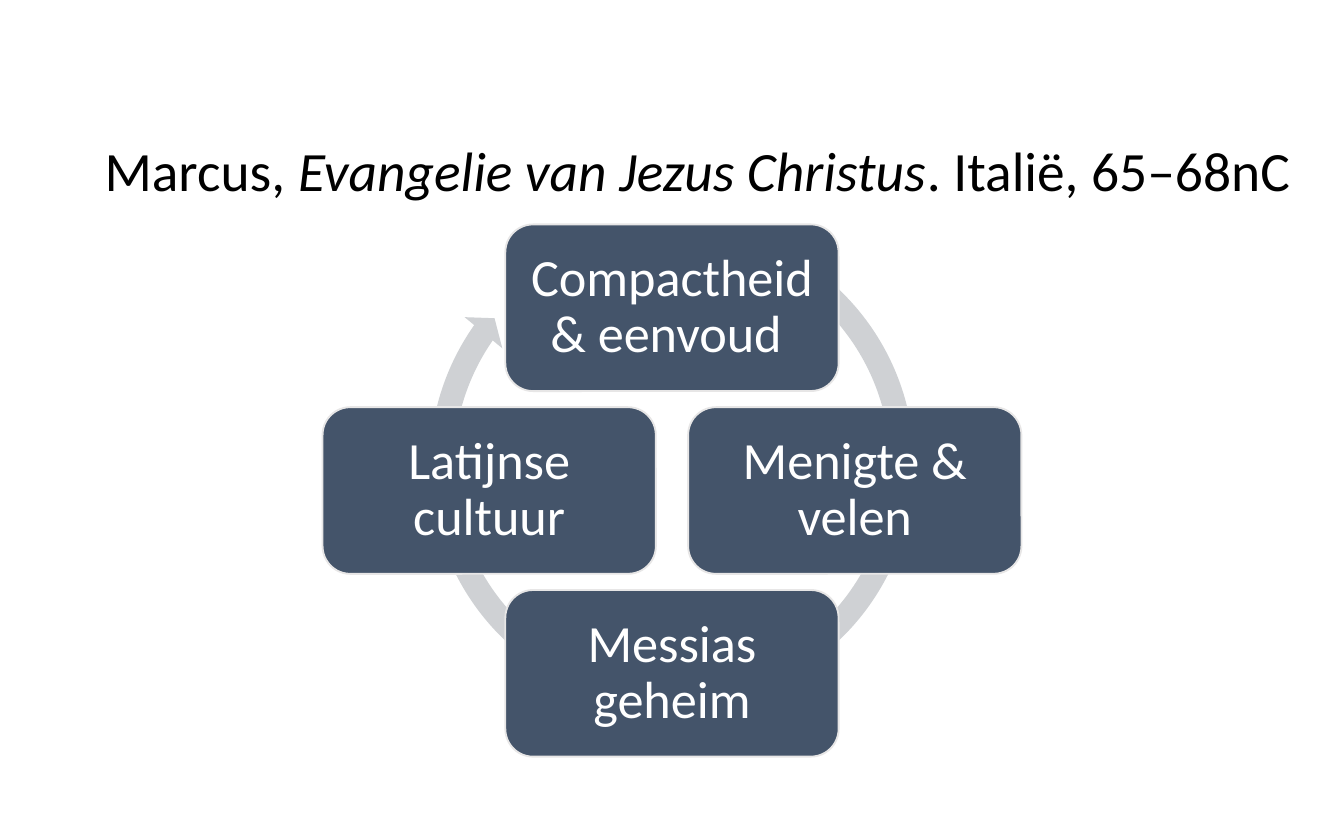
from dataclasses import dataclass

from pptx import Presentation
from pptx.dml.color import RGBColor
from pptx.enum.shapes import MSO_SHAPE
from pptx.enum.text import MSO_ANCHOR, PP_ALIGN
from pptx.util import Inches, Pt


@dataclass(frozen=True)
class Theme:
    font: str = "Calibri"
    ink: str = "000000"
    paper: str = "FFFFFF"
    card: str = "44546A"
    edge: str = "E7E6E6"
    arrow: str = "CFD1D4"
    title_size: float = 29.7
    card_size: float = 28
    line_spacing: float = 0.9


class CyclePage:
    """Draws a titled cycle on a grid centred on the ring."""

    center_x, center_y, step = 5, 3.65, 1.36
    card_width, card_height = 2.48, 1.24

    def __init__(self, page, theme):
        self.page, self.theme = page, theme

    def place(self, column, row, width, height):
        left = self.center_x + column * self.step - width / 2
        top = self.center_y + row * self.step - height / 2
        return [Inches(length) for length in (left, top, width, height)]

    def add_text(self, box, spans, size, color, margins):
        frame = box.text_frame
        frame_format = {"word_wrap": True, "vertical_anchor": MSO_ANCHOR.MIDDLE}
        frame_format.update({f"margin_{side}": Inches(inset) for side, inset in margins.items()})
        for name, value in frame_format.items():
            setattr(frame, name, value)
        para = frame.paragraphs[0]
        para.alignment, para.line_spacing = PP_ALIGN.CENTER, self.theme.line_spacing
        for text, italic in spans:
            span = para.add_run()
            span.text = text
            span.font.color.rgb = RGBColor.from_string(color)
            for name, value in {"name": self.theme.font, "size": Pt(size), "italic": italic}.items():
                setattr(span.font, name, value)

    def title(self, spans):
        area = [Inches(length) for length in (0.5, 0.92, 9.38, 0.74)]
        box = self.page.shapes.add_textbox(*area)
        margins = {"left": 0.1, "right": 0.1, "top": 0.05, "bottom": 0.05}
        self.add_text(box, spans, self.theme.title_size, self.theme.ink, margins)

    def shape(self, preset, area, fill):
        shape = self.page.shapes.add_shape(preset, *area)
        shape.shadow.inherit = False
        shape.fill.solid()
        shape.fill.fore_color.rgb = RGBColor.from_string(fill)
        return shape

    def ring(self, diameter, adjustments):
        area = self.place(0, -0.14, diameter, diameter)
        ring = self.shape(MSO_SHAPE.CIRCULAR_ARROW, area, self.theme.arrow)
        ring.line.fill.background()
        for index, value in enumerate(adjustments):
            ring.adjustments[index] = value

    def card(self, text, column, row):
        area = self.place(column, row, self.card_width, self.card_height)
        card = self.shape(MSO_SHAPE.ROUNDED_RECTANGLE, area, self.theme.card)
        card.line.color.rgb = RGBColor.from_string(self.theme.edge)
        card.line.width = Pt(1)
        margins = dict.fromkeys(("left", "right", "top", "bottom"), 0.12)
        self.add_text(card, [(text, False)], self.theme.card_size, self.theme.paper, margins)


def main():
    deck = Presentation()
    deck.slide_width, deck.slide_height = Inches(10), Inches(6.25)
    cycle = CyclePage(deck.slides.add_slide(deck.slide_layouts[6]), Theme())
    cycle.title([
        ("Marcus, ", False),
        ("Evangelie van Jezus Christus", True),
        (". Italië, 65–68nC", False),
    ])
    cycle.ring(3.79, (0.047, 2.729, 129.022, 179.828, 0.048))
    for text, column, row in (
        ("Compactheid & eenvoud ", 0, -1),
        ("Menigte & velen", 1, 0),
        ("Messias geheim", 0, 1),
        ("Latijnse cultuur", -1, 0),
    ):
        cycle.card(text, column, row)
    deck.save("out.pptx")


if __name__ == "__main__":
    main()
